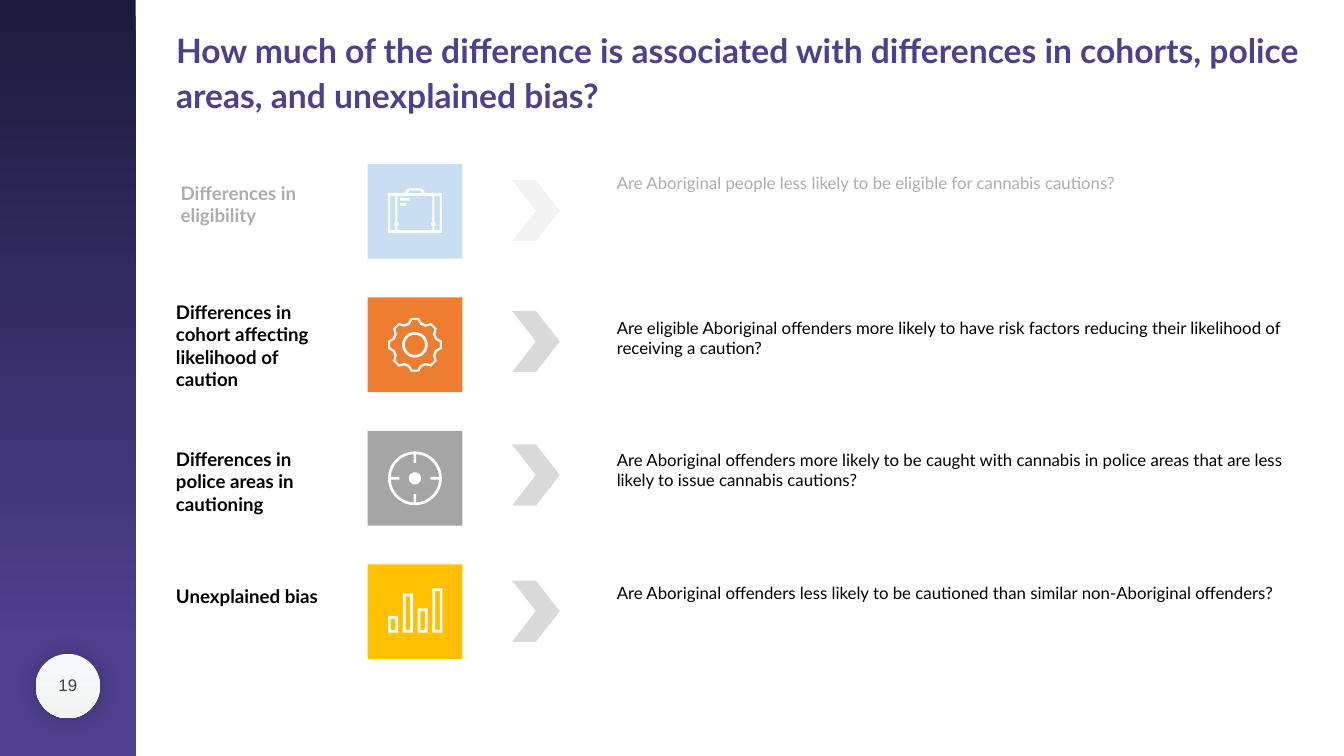
from math import cos, pi, sin

from lxml import etree
from pptx import Presentation
from pptx.dml.color import RGBColor
from pptx.enum.shapes import MSO_SHAPE as Shape
from pptx.enum.text import MSO_ANCHOR as Anchor, MSO_AUTO_SIZE as AutoSize, PP_ALIGN as Align
from pptx.oxml import parse_xml
from pptx.oxml.ns import nsdecls, qn
from pptx.util import Inches, Pt

WHITE = RGBColor(0xFF, 0xFF, 0xFF)
BLACK = RGBColor(0x00, 0x00, 0x00)
NAVY = RGBColor(0x1C, 0x1B, 0x3D)
PURPLE = RGBColor(0x4F, 0x40, 0x8E)
PALE_BLUE = RGBColor(0xF7, 0xFA, 0xFD)
PALE_GREY = RGBColor(0xF2, 0xF2, 0xF2)
DARK_GREY = RGBColor(0x40, 0x40, 0x40)
CHEVRON_GREY = RGBColor(0xD9, 0xD9, 0xD9)
BLUE = RGBColor(0x5B, 0x9B, 0xD5)
ORANGE = RGBColor(0xED, 0x7D, 0x31)
GREY = RGBColor(0xA5, 0xA5, 0xA5)
GOLD = RGBColor(0xFF, 0xC0, 0x00)

FIRST_TOP, LAST_TOP = 2.44, 8.4
TILE_LEFT, TILE_SIZE = 5.47, 1.41


def write_text(shape, text, size, color, bold=False, font="Lato", align=Align.LEFT,
               anchor=Anchor.TOP, spacing=None, grow=True):
    frame = shape.text_frame
    frame.word_wrap = True
    frame.auto_size = AutoSize.SHAPE_TO_FIT_TEXT if grow else AutoSize.NONE
    frame.vertical_anchor = anchor
    paragraph = frame.paragraphs[0]
    paragraph.alignment = align
    if spacing:
        paragraph.line_spacing = spacing
    run = paragraph.add_run()
    run.text = text
    run.font.name = font
    run.font.size = Pt(size)
    run.font.bold = bold
    run.font.color.rgb = color


def add_text(slide, box, text, size, color, **format):
    shape = slide.shapes.add_textbox(*map(Inches, box))
    write_text(shape, text, size, color, **format)


def set_plain(shape, color=None):
    shape.shadow.inherit = False
    shape.line.fill.background()
    if color is not None:
        shape.fill.solid()
        shape.fill.fore_color.rgb = color


def add_filled(slide, kind, box, color=None):
    shape = slide.shapes.add_shape(kind, *map(Inches, box))
    set_plain(shape, color)
    return shape


def set_gradient(shape, start, end, end_position):
    shape.fill.gradient()
    shape.fill.gradient_angle = 270
    stops = shape.fill.gradient_stops
    for stop, color, position in zip(stops, (start, end), (0, end_position)):
        stop.color.rgb = color
        stop.position = position


def rectangle(left, top, right, bottom):
    return [(left, top), (right, top), (right, bottom), (left, bottom)]


def circle(radius, count=60):
    angles = [2 * pi * step / count for step in range(count)]
    return [(radius * cos(angle), radius * sin(angle)) for angle in angles]


def repeat_around(points, count):
    turned = []
    for step in range(count):
        angle = 2 * pi * step / count
        turned += [(x * cos(angle) - y * sin(angle), x * sin(angle) + y * cos(angle))
                   for x, y in points]
    return turned


def suitcase_contours():
    body = [(-0.4, -0.27), (-0.15, -0.27), (-0.13, -0.32), (-0.08, -0.34), (0.08, -0.34),
            (0.13, -0.32), (0.15, -0.27), (0.4, -0.27), (0.4, 0.32), (-0.4, 0.32)]
    handle = [(-0.11, -0.27), (-0.08, -0.31), (0.08, -0.31), (0.11, -0.27)]
    panels = [rectangle(left, -0.23, right, 0.28)
              for left, right in ((-0.37, -0.29), (-0.26, 0.26), (0.29, 0.37))]
    clasps = [rectangle(left, 0.17, left + 0.02, 0.21) for left in (-0.31, -0.26, 0.24, 0.29)]
    marks = [rectangle(-0.22, -0.2, -0.08, -0.16), rectangle(-0.22, -0.12, -0.14, -0.08)]
    return [body, handle, *panels, *clasps, *marks]


def gear_contours():
    outer = [(-0.1, -0.33), (-0.06, -0.4), (0.06, -0.4), (0.1, -0.33)]
    inner = [(-0.08, -0.3), (-0.04, -0.37), (0.04, -0.37), (0.08, -0.3)]
    return [repeat_around(outer, 8), repeat_around(inner, 8), circle(0.19), circle(0.15)]


def target_contours():
    tick = rectangle(-0.02, -0.36, 0.02, -0.23)
    ticks = [[(x * cos(angle) - y * sin(angle), x * sin(angle) + y * cos(angle))
              for x, y in tick] for angle in (0, pi / 2, pi, 3 * pi / 2)]
    return [circle(0.4), circle(0.36), circle(0.09), *ticks]


def bar_contours():
    contours = []
    for index, height in enumerate((0.25, 0.58, 0.36, 0.66)):
        left, top = -0.4 + index * 0.22, 0.31 - height
        contours.append(rectangle(left, top, left + 0.15, 0.31))
        contours.append(rectangle(left + 0.04, top + 0.04, left + 0.11, 0.27))
    return contours


def add_icon(slide, x, y, contours):
    builder = None
    for contour in contours:
        points = [(Inches(x + dx), Inches(y + dy)) for dx, dy in contour]
        if builder is None:
            builder = slide.shapes.build_freeform(*points[0])
        else:
            builder.move_to(*points[0])
        builder.add_line_segments(points[1:], close=True)
    set_plain(builder.convert_to_shape(), WHITE)


def add_sidebar(slide, box, number):
    left, top = box[:2]
    set_gradient(add_filled(slide, Shape.RECTANGLE, box), NAVY, PURPLE, 0.85)
    badge_left, badge_top, size = left + 0.53, top + 9.73, 0.96
    badge = add_filled(slide, Shape.OVAL, (badge_left, badge_top, size, size))
    set_gradient(badge, PALE_BLUE, PALE_GREY, 1)
    shadow = parse_xml(
        f'<a:outerShdw {nsdecls("a")} blurRad="{Pt(22)}" dist="0" dir="0">'
        '<a:srgbClr val="000000"><a:alpha val="24000"/></a:srgbClr></a:outerShdw>')
    badge._element.spPr.find(qn("a:effectLst")).append(shadow)
    add_text(slide, (badge_left, badge_top + 0.07, size, 0.78), number, 18, DARK_GREY,
             font="Arial", align=Align.CENTER, anchor=Anchor.MIDDLE, grow=False)


def add_title(slide, box, text):
    title = slide.shapes.title
    title.left, title.top, title.width, title.height = map(Inches, box)
    write_text(title, text, 36, PURPLE, bold=True, spacing=1.1)


def add_row(slide, top, label, label_box, color, contours, chevron_shift, question,
            question_shift, question_height):
    label_left, label_shift, label_height = label_box
    add_filled(slide, Shape.RECTANGLE, (TILE_LEFT, top, TILE_SIZE, TILE_SIZE), color)
    add_icon(slide, TILE_LEFT + TILE_SIZE / 2, top + TILE_SIZE / 2, contours)
    add_text(slide, (label_left, top + label_shift, 2.53, label_height), label, 20, BLACK,
             bold=True)
    add_filled(slide, Shape.CHEVRON, (7.62, top + chevron_shift, 0.71, 0.91), CHEVRON_GREY)
    add_text(slide, (9.08, top + question_shift, 10.33, question_height), question, 18, BLACK)


def add_veil(slide, box):
    veil = add_filled(slide, Shape.RECTANGLE, box, WHITE)
    color = veil._element.spPr.find(qn("a:solidFill"))[0]
    etree.SubElement(color, qn("a:alpha"), val="68000")


ROWS = [
    ("Differences in eligibility", (2.59, 0.21, 0.77), BLUE, suitcase_contours(), 0.24,
     "Are Aboriginal people less likely to be eligible for cannabis cautions?", 0.08, 0.4),
    ("Differences in cohort affecting likelihood of caution", (2.52, 0, 1.45), ORANGE,
     gear_contours(), 0.2,
     "Are eligible Aboriginal offenders more likely to have risk factors reducing their "
     "likelihood of receiving a caution?", 0.25, 0.71),
    ("Differences in police areas in cautioning", (2.52, 0.2, 1.11), GREY, target_contours(),
     0.2,
     "Are Aboriginal offenders more likely to be caught with cannabis in police areas that "
     "are less likely to issue cannabis cautions?", 0.23, 0.71),
    ("Unexplained bias", (2.52, 0.25, 0.44), GOLD, bar_contours(), 0.24,
     "Are Aboriginal offenders less likely to be cautioned than similar non-Aboriginal "
     "offenders?", 0.22, 0.71),
]


def main():
    presentation = Presentation()
    presentation.slide_width = Inches(20)
    presentation.slide_height = Inches(11.25)
    slide = presentation.slides.add_slide(presentation.slide_layouts[5])
    add_sidebar(slide, (0, 0, 2.02, 11.25), "19")
    add_title(slide, (2.52, 0.34, 17.21, 1.38),
              "How much of the difference is associated with differences in cohorts, "
              "police areas, and unexplained bias?")
    pitch = (LAST_TOP - FIRST_TOP) / (len(ROWS) - 1)
    for index, row in enumerate(ROWS):
        add_row(slide, FIRST_TOP + index * pitch, *row)
    add_veil(slide, (2.33, 1.82, 16.83, 2.28))
    presentation.save("out.pptx")


if __name__ == "__main__":
    main()
